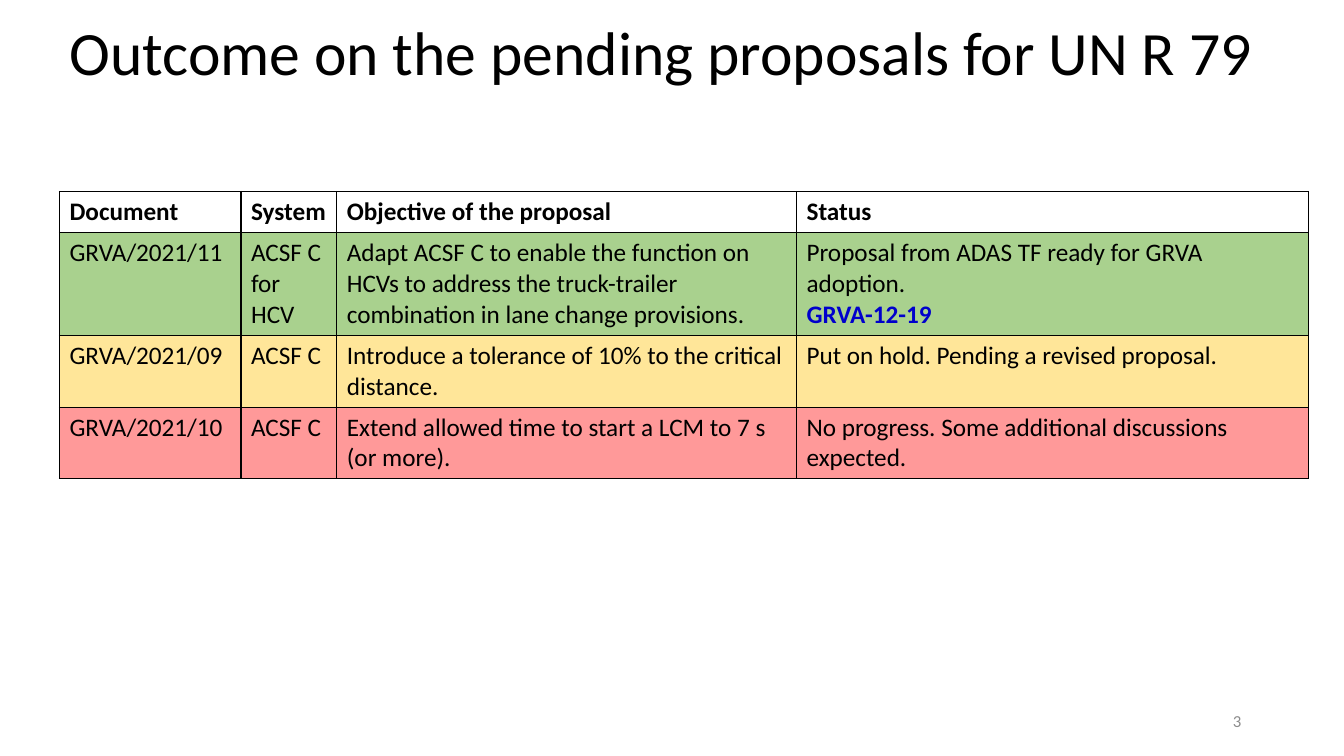
"""Build the slide on the outcome of the pending UN R 79 proposals."""
from dataclasses import dataclass

from lxml.etree import SubElement
from pptx import Presentation
from pptx.dml.color import RGBColor
from pptx.enum.text import MSO_ANCHOR, PP_ALIGN
from pptx.oxml.ns import qn
from pptx.slide import Slide
from pptx.table import _Cell
from pptx.text.text import _Paragraph
from pptx.util import Emu, Pt

EMU_PER_PX = 9144
FONT = "Calibri"
COLORS = {
    "text": "000000",
    "number": "8C8C8C",
    "reference": "0000CC",
    "header": "FFFFFF",
    "ready": "A9D18E",
    "hold": "FFE699",
    "stalled": "FF9999",
}
TABLE_LEFT, TABLE_TOP = 59, 190
COLUMN_WIDTHS = (180, 95, 456, 508)
CELL_MARGIN_RIGHT = 9


@dataclass(frozen=True)
class Label:
    text: str
    left: int
    top: int
    width: int
    height: int
    size: int
    color: str
    alignment: PP_ALIGN
    line_spacing: float


@dataclass(frozen=True)
class ProposalRow:
    cells: tuple[str, ...]
    height: int
    fill: str
    bold: bool = False
    reference: str = ""


LABELS = (
    Label("Outcome on the pending proposals for UN R 79", 59, 16, 1209, 79, 44,
          "text", PP_ALIGN.LEFT, 0.9),
    Label("3", 941, 695, 300, 40, 12, "number", PP_ALIGN.RIGHT, 1.0),
)
ROWS = (
    ProposalRow(("Document", "System", "Objective of the proposal", "Status"),
                41, "header", bold=True),
    ProposalRow(("GRVA/2021/11", "ACSF C\nfor HCV",
                 "Adapt ACSF C to enable the function on HCVs to address the "
                 "truck-trailer combination in lane change provisions.",
                 "Proposal from ADAS TF ready for GRVA adoption."),
                102, "ready", reference="GRVA-12-19"),
    ProposalRow(("GRVA/2021/09", "ACSF C",
                 "Introduce a tolerance of 10% to the critical distance.",
                 "Put on hold. Pending a revised proposal."),
                71, "hold"),
    ProposalRow(("GRVA/2021/10", "ACSF C",
                 "Extend allowed time to start a LCM to 7 s\v(or more).",
                 "No progress. Some additional discussions expected."),
                71, "stalled"),
)


def px(length: int) -> Emu:
    return Emu(length * EMU_PER_PX)


def rgb(name: str) -> RGBColor:
    return RGBColor.from_string(COLORS[name])


def style_paragraph(paragraph: _Paragraph, size: int, color: str, bold: bool = False) -> None:
    font = paragraph.font
    font.name = FONT
    font.size = Pt(size)
    font.bold = bold
    font.color.rgb = rgb(color)


def add_label(slide: Slide, label: Label) -> None:
    shape = slide.shapes.add_textbox(
        px(label.left), px(label.top), px(label.width), px(label.height))
    frame = shape.text_frame
    frame.word_wrap = True
    frame.vertical_anchor = MSO_ANCHOR.MIDDLE
    paragraph = frame.paragraphs[0]
    paragraph.text = label.text
    paragraph.alignment = label.alignment
    paragraph.line_spacing = label.line_spacing
    style_paragraph(paragraph, label.size, label.color)


def add_borders(cell: _Cell) -> None:
    properties = cell._tc.get_or_add_tcPr()
    for side in ("a:lnL", "a:lnR", "a:lnT", "a:lnB"):
        line = SubElement(properties, qn(side), w=str(Pt(1)))
        fill = SubElement(line, qn("a:solidFill"))
        SubElement(fill, qn("a:srgbClr"), val=COLORS["text"])


def fill_cell(cell: _Cell, text: str, row: ProposalRow) -> None:
    add_borders(cell)
    cell.margin_right = px(CELL_MARGIN_RIGHT)
    cell.fill.solid()
    cell.fill.fore_color.rgb = rgb(row.fill)
    cell.text = text
    for paragraph in cell.text_frame.paragraphs:
        style_paragraph(paragraph, 18, "text", row.bold)


def add_proposal_table(slide: Slide) -> None:
    frame = slide.shapes.add_table(
        len(ROWS), len(COLUMN_WIDTHS), px(TABLE_LEFT), px(TABLE_TOP),
        px(sum(COLUMN_WIDTHS)), px(sum(row.height for row in ROWS)))
    table = frame.table
    table.first_row = False
    table.horz_banding = False
    for column, width in zip(table.columns, COLUMN_WIDTHS):
        column.width = px(width)
    for table_row, row in zip(table.rows, ROWS):
        table_row.height = px(row.height)
        for cell, text in zip(table_row.cells, row.cells):
            fill_cell(cell, text, row)
        if row.reference:
            paragraph = table_row.cells[len(row.cells) - 1].text_frame.add_paragraph()
            paragraph.text = row.reference
            style_paragraph(paragraph, 18, "reference", bold=True)


def main() -> None:
    presentation = Presentation()
    presentation.slide_width = px(1333)
    presentation.slide_height = px(750)
    slide = presentation.slides.add_slide(presentation.slide_layouts[6])
    for label in LABELS:
        add_label(slide, label)
    add_proposal_table(slide)
    presentation.save("out.pptx")


if __name__ == "__main__":
    main()
